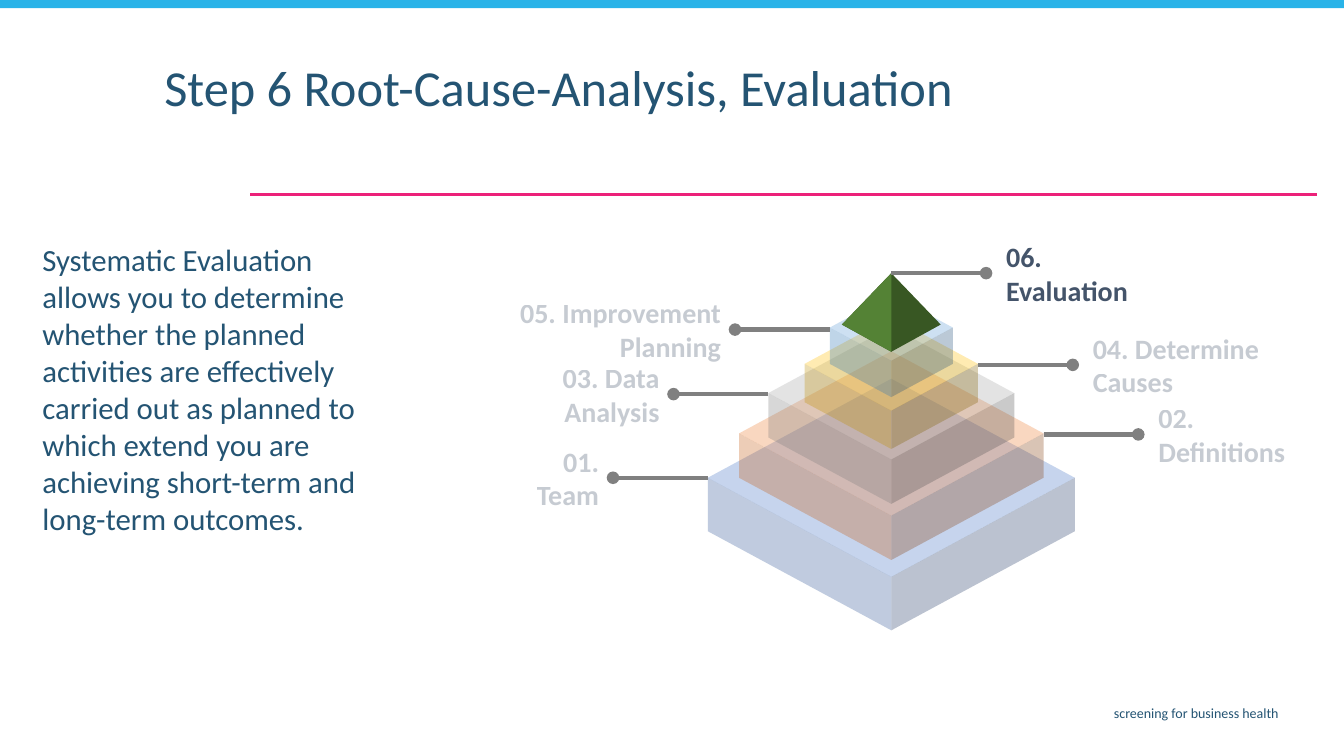
from lxml.etree import SubElement
from pptx import Presentation
from pptx.dml.color import RGBColor
from pptx.enum.shapes import MSO_CONNECTOR, MSO_SHAPE
from pptx.enum.text import MSO_ANCHOR, MSO_AUTO_SIZE, PP_ALIGN
from pptx.oxml.ns import qn
from pptx.util import Inches, Pt

# The grid has cells of a tenth of an inch.
COLUMNS, ROWS = 133.3, 75
NAVY, SLATE, GREY = "245473", "44546A", "808080"
FADED = 0.3

AXIS = 88.4
SLOPE = 0.54
APEX_ROW = 27.1
POINTER = 9.4

# half width, rim row, depth, colours of top, right and left faces
TIERS = [
    (18.2, 47.4, 5.3, ("4472C4", "203864", "2F5597")),
    (15.1, 43, 4.4, ("ED7D31", "843C0B", "C55A11")),
    (12.2, 39, 4.4, ("A5A5A5", "525252", "7C7C7C")),
    (8.6, 36.1, 3.8, ("FFC000", "806000", "BF9000")),
    (6.1, 32.5, 3.6, ("5B9BD5", "1F4E79", "2E75B6")),
]

# text, label width, half width of the tier, pointer row, side (-1 is left)
LABELS = [
    ("01. Team", 9.5, 18.2, 47.4, -1),
    ("02. Definitions", 15.8, 15.1, 43.1, 1),
    ("03. Data Analysis", 14, 12.2, 39.1, -1),
    ("04. Determine Causes", 21, 8.6, 36.2, 1),
    ("05. Improvement Planning", 25, 6.1, 32.7, -1),
    ("06. Evaluation", 15.5, 0, APEX_ROW, 1),
]


def grid(*cells):
    return [Inches(cell / 10) for cell in cells]


def paint(fill, colour):
    fill.solid()
    fill.fore_color.rgb = RGBColor.from_string(colour)


def fade(shape, opacity):
    """Make every colour of the shape, its text included, see-through."""
    for colour in shape.element.iter(qn("a:srgbClr")):
        SubElement(colour, qn("a:alpha"), val=str(round(opacity * 100000)))


def write(box, text, size, colour=NAVY, bold=False, align=PP_ALIGN.LEFT,
          anchor=MSO_ANCHOR.TOP, spacing=1.0):
    frame = box.text_frame
    frame.word_wrap = True
    frame.auto_size = MSO_AUTO_SIZE.NONE
    frame.vertical_anchor = anchor
    para = frame.paragraphs[0]
    para.alignment = align
    para.line_spacing = spacing
    para.space_before = Pt(0)
    span = para.add_run()
    span.text = text
    span.font.name = "Calibri"
    span.font.size = Pt(size)
    span.font.bold = bold
    paint(span.font.fill, colour)


def place(shape, *cells):
    shape.left, shape.top, shape.width, shape.height = grid(*cells)


def add_text(page, cells, text, size, **text_format):
    box = page.shapes.add_textbox(*grid(*cells))
    write(box, text, size, **text_format)
    return box


def add_line(page, start, end, colour, weight, dot=False):
    line = page.shapes.add_connector(
        MSO_CONNECTOR.STRAIGHT, *grid(*start, *end))
    paint(line.line.fill, colour)
    line.line.width = Pt(weight)
    if dot:
        SubElement(line.line._get_or_add_ln(), qn("a:tailEnd"), type="oval")
    SubElement(line.element.spPr, qn("a:effectLst"))


def finish(shape, colour):
    paint(shape.fill, colour)
    shape.line.fill.background()
    shape.shadow.inherit = False


def add_face(page, points, colour, opacity=1):
    corners = [grid(*point) for point in points]
    builder = page.shapes.build_freeform(*corners[0])
    builder.add_line_segments(corners[1:], close=True)
    face = builder.convert_to_shape()
    finish(face, colour)
    if opacity < 1:
        fade(face, opacity)


def add_tier(page, half, rim, depth, colours):
    rise = half * SLOPE
    top, right, left = colours
    front = (AXIS, rim + rise)
    add_face(page, [(AXIS, rim - rise), (AXIS + half, rim), front,
                    (AXIS - half, rim)], top, FADED)
    for side, colour in ((1, right), (-1, left)):
        edge = AXIS + side * half
        add_face(page, [(AXIS, rim + rise + depth), (edge, rim + depth),
                        (edge, rim), front], colour, FADED)


def add_tip(page):
    half, rim = 4.9, 32.2
    apex, front, left = (AXIS, APEX_ROW), (AXIS, 34.9), (AXIS - half, rim)
    add_face(page, [apex, (AXIS + half, rim), front, left], "385723")
    add_face(page, [apex, front, left], "548235")


def add_label(page, text, width, half, row, side):
    start = AXIS + side * half
    end = start + side * POINTER
    add_line(page, (start, row), (end, row), GREY, 3, dot=True)
    left = end + 1 if side > 0 else end - 0.4 - width
    align = PP_ALIGN.LEFT if side > 0 else PP_ALIGN.RIGHT
    label = add_text(page, (left, row - 3.8, width, 7.6), text, 20,
                     colour=SLATE, bold=True, align=align,
                     anchor=MSO_ANCHOR.MIDDLE)
    if half:
        fade(label, FADED)


def add_frame(page):
    add_line(page, (130.6, 19.3), (24.8, 19.3), "EC2179", 1.5)
    bar = page.shapes.add_shape(
        MSO_SHAPE.RECTANGLE, *grid(0, 0, COLUMNS, 0.8))
    finish(bar, "29B3E8")
    add_text(page, (36.5, 69.4, 91.3, 2.9), "screening for business health",
             10, align=PP_ALIGN.RIGHT)


def fill_placeholders(page):
    title, body = page.placeholders
    place(title, 15.3, 5.7, 100.5, 9)
    write(title, "Step 6 Root-Cause-Analysis, Evaluation", 36, spacing=0.9)
    place(body, 3.2, 23.4, 34.7, 35.1)
    settings = body.text_frame.paragraphs[0]._p.get_or_add_pPr()
    settings.set("marL", "0")
    settings.set("indent", "0")
    SubElement(settings, qn("a:buNone"))
    write(body, "Systematic Evaluation allows you to determine whether the "
          "planned activities are effectively carried out as planned to "
          "which extend you are achieving short-term and long-term outcomes.",
          22)


def main():
    deck = Presentation()
    deck.slide_width, deck.slide_height = grid(COLUMNS, ROWS)
    page = deck.slides.add_slide(deck.slide_layouts.get_by_name(
        "Title and Content"))
    fill_placeholders(page)
    add_frame(page)
    for tier in TIERS:
        add_tier(page, *tier)
    add_tip(page)
    for label in LABELS:
        add_label(page, *label)
    deck.save("out.pptx")


if __name__ == "__main__":
    main()
